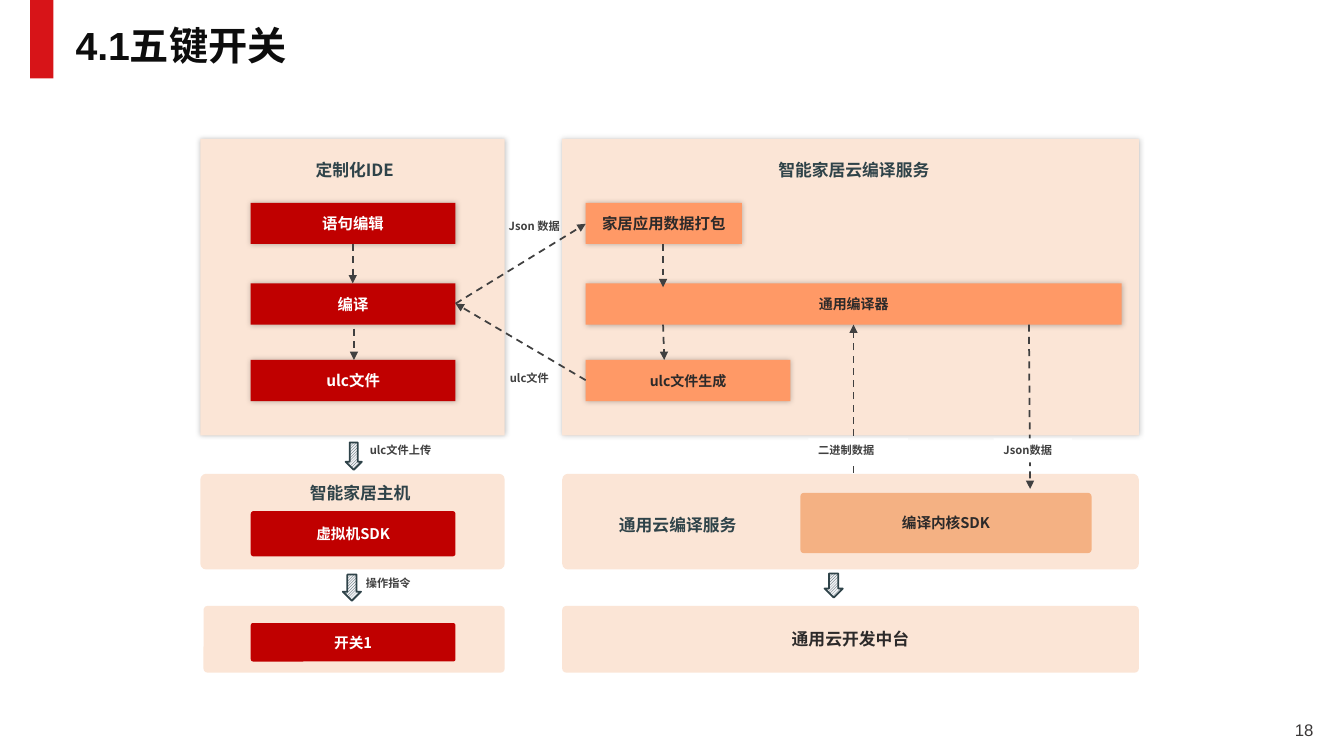
from lxml import etree
from pptx import Presentation
from pptx.dml.color import RGBColor
from pptx.enum import dml, shapes, text
from pptx.oxml import ns
from pptx.util import Cm, Pt

CJK = "Noto Sans CJK SC"
PEACH, RED, ORANGE, TAN = "FBE5D6", "C00000", "FF9966", "F4B183"
WHITE, INK, SLATE, GREY = "FFFFFF", "2C2A2A", "2F4349", "404040"

RECT = shapes.MSO_SHAPE.RECTANGLE
ROUND = shapes.MSO_SHAPE.ROUNDED_RECTANGLE
DOWN = shapes.MSO_SHAPE.DOWN_ARROW
LEFT, CENTER, RIGHT = text.PP_ALIGN.LEFT, text.PP_ALIGN.CENTER, text.PP_ALIGN.RIGHT

LEFT_X, LEFT_W = 5.05, 7.67
RIGHT_X, RIGHT_W = 14.17, 14.53
RED_X, ORANGE_X, BLOCK_W, BLOCK_H = 6.32, 14.76, 5.16, 1.04
ROW_1, ROW_2, ROW_3 = 5.11, 7.14, 9.07

PANELS = [
    (RECT, LEFT_X, 3.5, LEFT_W, 7.47, "", 12),
    (RECT, RIGHT_X, 3.5, RIGHT_W, 7.47, "", 12),
    (ROUND, LEFT_X, 11.94, LEFT_W, 2.41, "", 12),
    (ROUND, RIGHT_X, 11.94, RIGHT_W, 2.41, "", 12),
    (ROUND, 5.13, 15.27, 7.59, 1.68, "", 12),
    (ROUND, RIGHT_X, 15.27, RIGHT_W, 1.68, "通用云开发中台", 12),
]
RED_BLOCKS = [
    (RECT, RED_X, ROW_1, BLOCK_W, BLOCK_H, "语句编辑", 11),
    (RECT, RED_X, ROW_2, BLOCK_W, BLOCK_H, "编译", 11),
    (RECT, RED_X, ROW_3, BLOCK_W, BLOCK_H, "ulc文件", 11),
    (ROUND, RED_X, 12.88, BLOCK_W, 1.14, "虚拟机SDK", 10.5),
    (ROUND, RED_X, 15.7, BLOCK_W, 0.97, "开关1", 10.5),
]
ORANGE_BLOCKS = [
    (RECT, ORANGE_X, ROW_1, 3.94, BLOCK_H, "家居应用数据打包", 11),
    (RECT, ORANGE_X, ROW_2, 13.51, BLOCK_H, "通用编译器", 10),
    (RECT, ORANGE_X, ROW_3, BLOCK_W, BLOCK_H, "ulc文件生成", 10),
]
TAN_BLOCKS = [(ROUND, 20.17, 12.42, 7.34, 1.52, "编译内核SDK", 10.5)]
BLOCK_GROUPS = [
    (PANELS, PEACH, INK),
    (RED_BLOCKS, RED, WHITE),
    (ORANGE_BLOCKS, ORANGE, INK),
    (TAN_BLOCKS, TAN, INK),
]
HEADINGS = [
    ("定制化IDE", 5.89, 3.91, 6.1),
    ("智能家居云编译服务", 18.47, 3.91, 6.1),
    ("智能家居主机", 6.83, 12.04, 4.5),
    ("通用云编译服务", 14.83, 12.85, 4.5),
]
FLOWS = [
    (11.48, 7.65, 14.76, 5.64),
    (14.76, 9.58, 11.48, 7.65),
    (25.93, 8.18, 25.96, 12.32),
    (21.51, 11.91, 21.51, 8.18),
    (8.89, 6.15, 8.89, 7.14),
    (8.92, 8.28, 8.92, 9.07),
    (16.71, 6.15, 16.71, 7.24),
    (16.71, 8.18, 16.74, 9.07),
]
FLOW_LABELS = [
    ("Json 数据", 12.57, 5.41, 2.06, None),
    ("ulc文件", 12.6, 9.22, 1.75, None),
    ("Json数据", 25.04, 11.05, 1.98, WHITE),
    ("二进制数据", 20.37, 11.05, 2.51, WHITE),
    ("ulc文件上传", 9.07, 11.05, 2.77, None),
    ("操作指令", 8.97, 14.4, 3.48, None),
]
DOWN_ARROWS = [
    (8.71, 11.15, 0.41, 0.69),
    (8.64, 14.48, 0.46, 0.66),
    (20.78, 14.45, 0.46, 0.61),
]


def color(value):
    return RGBColor.from_string(value)


def write(box, words, size, ink, align, bold=True, font=CJK):
    frame = box.text_frame
    frame.word_wrap = True
    para = frame.paragraphs[0]
    span = para.add_run()
    span.text = words
    para.alignment = align
    para.font.name = font
    para.font.size = Pt(size)
    para.font.bold = bold
    para.font.color.rgb = color(ink)
    span.font.name = font
    east = etree.SubElement(span.font._element, ns.qn("a:ea"))
    east.set("typeface", CJK)
    return para


def add_text(page, words, x, y, w, h, size, ink, align, **style):
    box = page.shapes.add_textbox(Cm(x), Cm(y), Cm(w), Cm(h))
    write(box, words, size, ink, align, **style)
    return box


def add_block(page, kind, x, y, w, h, fill):
    block = page.shapes.add_shape(kind, Cm(x), Cm(y), Cm(w), Cm(h))
    block.shadow.inherit = False
    block.fill.solid()
    block.fill.fore_color.rgb = color(fill)
    block.line.fill.background()
    if kind == ROUND:
        block.adjustments[0] = 0.06
    return block


def add_glow(block):
    effects = block._element.spPr.find(ns.qn("a:effectLst"))
    glow = etree.SubElement(effects, ns.qn("a:outerShdw"), blurRad=str(Pt(4)),
                            dist="0", dir="0", algn="ctr", rotWithShape="0")
    black = etree.SubElement(glow, ns.qn("a:srgbClr"), val="000000")
    etree.SubElement(black, ns.qn("a:alpha"), val="26000")


def add_flow(page, *ends):
    flow = page.shapes.add_connector(shapes.MSO_CONNECTOR.STRAIGHT, *map(Cm, ends))
    flow.line.color.rgb = color(GREY)
    flow.line.width = Pt(1.25)
    flow.line.dash_style = dml.MSO_LINE.DASH
    etree.SubElement(flow.line._get_or_add_ln(), ns.qn("a:tailEnd"), type="triangle")
    etree.SubElement(flow._element.spPr, ns.qn("a:effectLst"))


def add_down_arrow(page, *place):
    arrow = add_block(page, DOWN, *place, WHITE)
    arrow.fill.patterned()
    arrow.fill.pattern = dml.MSO_PATTERN.DARK_UPWARD_DIAGONAL
    arrow.fill.fore_color.rgb = color(SLATE)
    arrow.fill.back_color.rgb = color("F0F2F5")
    arrow.line.color.rgb = color(SLATE)
    arrow.line.width = Pt(1.25)


def main():
    deck = Presentation()
    deck.slide_width, deck.slide_height = Cm(33.87), Cm(19.05)
    page = deck.slides.add_slide(deck.slide_layouts[5])

    title = page.shapes.title
    title.left, title.top, title.width, title.height = Cm(1.65), Cm(0.58), Cm(29.21), Cm(1.24)
    title.text_frame.vertical_anchor = text.MSO_ANCHOR.MIDDLE
    write(title, "4.1五键开关", 28, "0D0D0D", LEFT, font="Arial").line_spacing = 0.9
    add_block(page, RECT, 0.76, 0, 0.59, 1.98, "D71418")
    add_text(page, "18", 25.73, 18.01, 7.62, 1.02, 12, "3B3838", RIGHT, bold=False, font="Arial")

    for blocks, fill, ink in BLOCK_GROUPS:
        for kind, x, y, w, h, words, size in blocks:
            block = add_block(page, kind, x, y, w, h, fill)
            if kind == RECT:
                add_glow(block)
            if words:
                block.text_frame.vertical_anchor = text.MSO_ANCHOR.MIDDLE
                write(block, words, size, ink, CENTER)

    for words, x, y, w in HEADINGS:
        add_text(page, words, x, y, w, 0.77, 12, SLATE, CENTER)
    for ends in FLOWS:
        add_flow(page, *ends)
    for place in DOWN_ARROWS:
        add_down_arrow(page, *place)
    for words, x, y, w, fill in FLOW_LABELS:
        label = add_text(page, words, x, y, w, 0.6, 8, GREY, LEFT)
        if fill:
            label.fill.solid()
            label.fill.fore_color.rgb = color(fill)

    deck.save("out.pptx")


if __name__ == "__main__":
    main()
